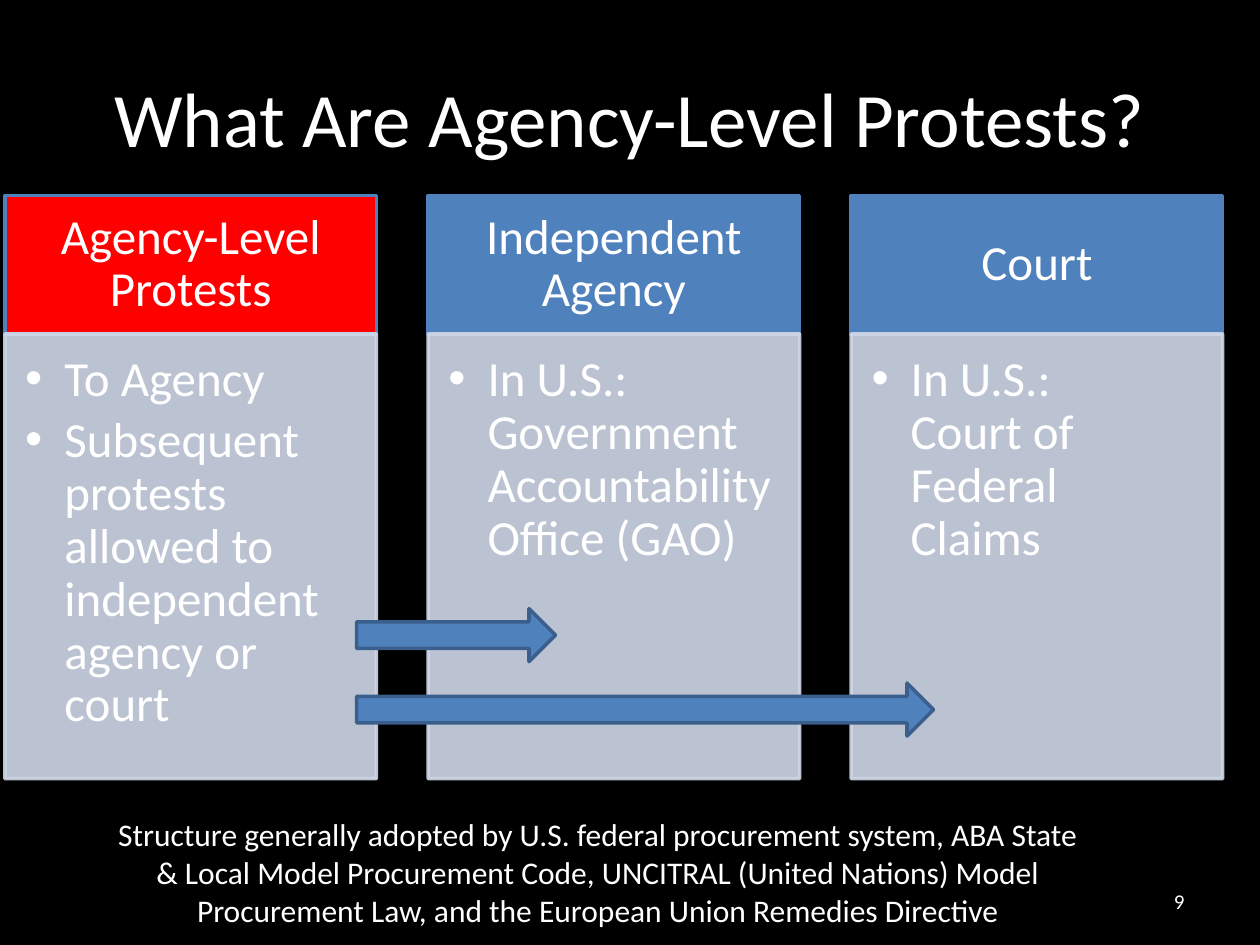
import pptx
import pptx.util
import pptx.dml.color
import pptx.enum.shapes
import pptx.enum.text
import pptx.oxml.ns
import lxml.etree

Cm = pptx.util.Cm
Pt = pptx.util.Pt
SHAPES = pptx.enum.shapes.MSO_SHAPE
ALIGN = pptx.enum.text.PP_ALIGN
ANCHOR = pptx.enum.text.MSO_ANCHOR

TITLE = "What Are Agency-Level Protests?"
COLUMNS = [
    ("Agency-Level Protests", "red",
     ["To Agency", "Subsequent protests allowed to independent agency or court"]),
    ("Independent Agency", "blue",
     ["In U.S.: Government Accountability Office (GAO)"]),
    ("Court", "blue", ["In U.S.:\vCourt of Federal Claims"]),
]
ARROWS = [(12.27, 4.01), (13.77, 11.63)]
FOOTNOTE = (
    "Structure generally adopted by U.S. federal procurement system, ABA State "
    "& Local Model Procurement Code, UNCITRAL (United Nations) Model "
    "Procurement Law, and the European Union Remedies Directive"
)
PAGE_NUMBER = "9"

COLORS = {
    "black": "000000", "white": "FFFFFF", "red": "FF0000",
    "blue": "4F81BD", "pale": "D0D8E8", "outline": "3A5F8C",
}
COLUMN_LEFT, COLUMN_TOP, COLUMN_WIDTH, COLUMN_STEP = 0.1, 3.94, 7.49, 8.53
HEADER_HEIGHT, BODY_HEIGHT = 2.79, 8.97
ARROW_LEFT, ARROW_HEIGHT = 7.19, 1.07


def rgb(name):
    return pptx.dml.color.RGBColor.from_string(COLORS[name])


def add_child(parent, tag, **attributes):
    return lxml.etree.SubElement(parent, pptx.oxml.ns.qn(tag), attributes)


def write_text(box, texts, size=28, align=ALIGN.LEFT, anchor=ANCHOR.TOP,
               insets=(0.25, 0.13, 0.25, 0.13), spacing=None, after=0, bullet=False):
    frame = box.text_frame
    frame.word_wrap = True
    frame.vertical_anchor = anchor
    (frame.margin_left, frame.margin_top,
     frame.margin_right, frame.margin_bottom) = map(Cm, insets)
    for index, text in enumerate(texts):
        para = frame.add_paragraph() if index else frame.paragraphs[0]
        para.text = text
        para.alignment = align
        para.line_spacing = spacing
        para.space_after = Pt(after)
        if bullet:
            properties = para._p.get_or_add_pPr()
            properties.set("marL", str(Cm(0.79)))
            properties.set("indent", str(-Cm(0.79)))
            add_child(properties, "a:buFont", typeface="Arial")
            add_child(properties, "a:buChar", char="•")
        for span in para.runs:
            span.font.name = "Calibri"
            span.font.size = Pt(size)
            span.font.color.rgb = rgb("white")


def add_panel(page, kind, place, fill, line, opacity=None):
    box = page.shapes.add_shape(kind, *map(Cm, place))
    box.shadow.inherit = False
    box.fill.solid()
    box.fill.fore_color.rgb = rgb(fill)
    box.line.color.rgb = rgb(line)
    box.line.width = Pt(2)
    if opacity:
        for color in box._element.spPr.iter(pptx.oxml.ns.qn("a:srgbClr")):
            add_child(color, "a:alpha", val=str(opacity * 1000))
    return box


def add_column(page, index, heading, fill, points):
    left = COLUMN_LEFT + index * COLUMN_STEP
    header = add_panel(page, SHAPES.RECTANGLE,
                       (left, COLUMN_TOP, COLUMN_WIDTH, HEADER_HEIGHT), fill, "blue")
    write_text(header, [heading], align=ALIGN.CENTER, anchor=ANCHOR.MIDDLE,
               insets=(0.56, 0.3, 0.56, 0.3), spacing=0.9)
    body = add_panel(page, SHAPES.RECTANGLE,
                     (left, COLUMN_TOP + HEADER_HEIGHT, COLUMN_WIDTH, BODY_HEIGHT),
                     "pale", "pale", opacity=90)
    write_text(body, points, insets=(0.41, 0.41, 0.53, 0.61),
               spacing=0.9, after=4.5, bullet=True)


def main():
    deck = pptx.Presentation()
    deck.slide_width, deck.slide_height = Cm(25.4), Cm(19.05)
    page = deck.slides.add_slide(deck.slide_layouts.get_by_name("Title Only"))
    page.background.fill.solid()
    page.background.fill.fore_color.rgb = rgb("black")

    title = page.shapes.title
    title.left, title.top, title.width, title.height = map(Cm, (1.27, 0.76, 22.86, 3.18))
    write_text(title, [TITLE], size=44, align=ALIGN.CENTER, anchor=ANCHOR.MIDDLE)

    for index, column in enumerate(COLUMNS):
        add_column(page, index, *column)
    for top, width in ARROWS:
        add_panel(page, SHAPES.RIGHT_ARROW, (ARROW_LEFT, top, width, ARROW_HEIGHT),
                  "blue", "outline")

    footnote = page.shapes.add_textbox(*map(Cm, (2.11, 16.31, 19.89, 2.57)))
    write_text(footnote, [FOOTNOTE], size=18, align=ALIGN.CENTER)
    number = page.shapes.add_textbox(*map(Cm, (18.21, 17.65, 5.92, 1.02)))
    write_text(number, [PAGE_NUMBER], size=12, align=ALIGN.RIGHT, anchor=ANCHOR.MIDDLE)

    deck.save("out.pptx")


if __name__ == "__main__":
    main()
